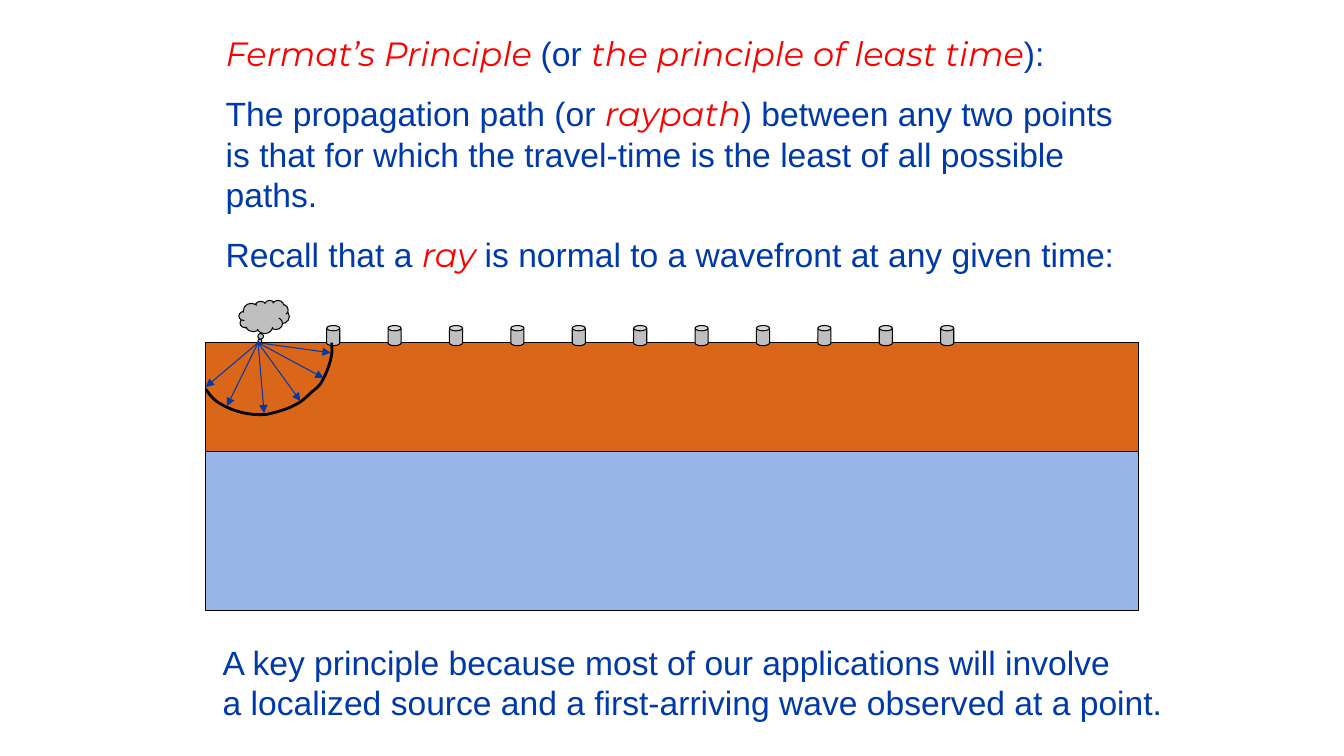
"""Build a slide on Fermat's principle with rays and a wavefront in a layered earth."""
import pptx
import pptx.util
import pptx.dml.color
import pptx.enum.shapes
import pptx.enum.text
import pptx.oxml
import pptx.oxml.ns

COLORS = {"text": "0039AC", "term": "FF0000", "upper": "DA661A", "lower": "97B5E6",
          "device": "BFBFBF", "outline": "000000"}
KIND = pptx.enum.shapes.MSO_SHAPE
NS = pptx.oxml.ns.nsdecls("a")

deck = pptx.Presentation()
deck.slide_width = pptx.util.Inches(13.33)
deck.slide_height = pptx.util.Inches(7.5)
slide = deck.slides.add_slide(deck.slide_layouts[6])
COL = deck.slide_width / 1333
ROW = deck.slide_height / 750


def grid(*cells):
    """Turn alternating column and row counts into lengths."""
    return [round(cell * (ROW if i % 2 else COL)) for i, cell in enumerate(cells)]


def add_text(lines, at, size=24, gap=14, gap_before=()):
    """Add lines of text in which every second run is an emphasised term."""
    frame = slide.shapes.add_textbox(*grid(*at)).text_frame
    frame.word_wrap = False
    frame.auto_size = pptx.enum.text.MSO_AUTO_SIZE.SHAPE_TO_FIT_TEXT
    for number, pieces in enumerate(lines):
        paragraph = frame.paragraphs[0] if number == 0 else frame.add_paragraph()
        paragraph.space_before = pptx.util.Pt(gap if number in gap_before else 0)
        for order, words in enumerate(pieces):
            if not words:
                continue
            is_term = order % 2 == 1
            run = paragraph.add_run()
            run.text = words
            run.font.size = pptx.util.Pt(size)
            run.font.italic = is_term
            run.font.name = "Montserrat" if is_term else "Arial"
            run.font.color.rgb = pptx.dml.color.RGBColor.from_string(
                COLORS["term" if is_term else "text"])


add_text([
    ["", "Fermat’s Principle ", "(or ", "the principle of least time", "):"],
    ["The propagation path (or ", "raypath", ") between any two points"],
    ["is that for which the travel-time is the least of all possible"],
    ["paths."],
    ["Recall that a ", "ray ", "is normal to a wavefront at any given time:"],
], at=(214, 28, 915, 252), gap_before=(1, 4))

wavefront = [(329, 340),
             (329, 345), (330, 350), (328, 356), (327, 362), (323, 372), (320, 377),
             (317, 383), (314, 385), (309, 389), (305, 393), (299, 399), (292, 402),
             (285, 406), (274, 409), (265, 411), (256, 412), (247, 411), (239, 409),
             (231, 407), (222, 403), (216, 399), (210, 395), (207, 390), (204, 386)]
STEPS = 8
curve = []
for start in range(0, len(wavefront) - 1, 3):
    controls = wavefront[start:start + 4]
    for step in range(1, STEPS + 1):
        t = step / STEPS
        weights = ((1 - t) ** 3, 3 * t * (1 - t) ** 2, 3 * t * t * (1 - t), t ** 3)
        curve.append(grid(*(sum(w * point[axis] for w, point in zip(weights, controls))
                            for axis in (0, 1))))

FIRST_GEOPHONE, GEOPHONE_STEP, GEOPHONE_COUNT = 324, 60.9, 11
geophones = [(KIND.CAN, (FIRST_GEOPHONE + GEOPHONE_STEP * i, 323, 13, 20), "device", [0.404])
             for i in range(GEOPHONE_COUNT)]
layers = [(KIND.RECTANGLE, (204, 340, 925, 108), "upper", []),
          (KIND.RECTANGLE, (204, 448, 925, 158), "lower", [])]
blast = (KIND.CLOUD_CALLOUT, (237, 298, 50, 33), "device", [-0.094, 0.807])
for kind, at, color, adjustments in layers + [blast] + geophones:
    body = slide.shapes.add_shape(kind, *grid(*at))
    body.shadow.inherit = False
    for index, value in enumerate(adjustments):
        body.adjustments[index] = value
    body.fill.solid()
    body.fill.fore_color.rgb = pptx.dml.color.RGBColor.from_string(COLORS[color])
    body.line.color.rgb = pptx.dml.color.RGBColor.from_string(COLORS["outline"])
    body.line.width = pptx.util.Pt(0.75)

front_builder = slide.shapes.build_freeform(*grid(*wavefront[0]))
front_builder.add_line_segments(curve, close=False)
front = front_builder.convert_to_shape()
front.shadow.inherit = False
front.fill.background()
front.line.color.rgb = pptx.dml.color.RGBColor.from_string(COLORS["outline"])
front.line.width = pptx.util.Pt(2)

source = (256, 340)
for ray_end in [(204, 384), (225, 403), (262, 410), (298, 398), (321, 375), (328, 350)]:
    ray = slide.shapes.add_connector(pptx.enum.shapes.MSO_CONNECTOR.STRAIGHT,
                                     *grid(*source, *ray_end))
    ray.line.color.rgb = pptx.dml.color.RGBColor.from_string(COLORS["text"])
    ray.line.width = pptx.util.Pt(0.75)
    ray.line._get_or_add_ln().append(pptx.oxml.parse_xml(f'<a:tailEnd {NS} type="triangle"/>'))
    ray._element.spPr.append(pptx.oxml.parse_xml(f"<a:effectLst {NS}/>"))

add_text([
    ["A key principle because most of our applications will involve"],
    ["a localized source and a first-arriving wave observed at a point."],
], at=(211, 632, 962, 91))

deck.save("out.pptx")
